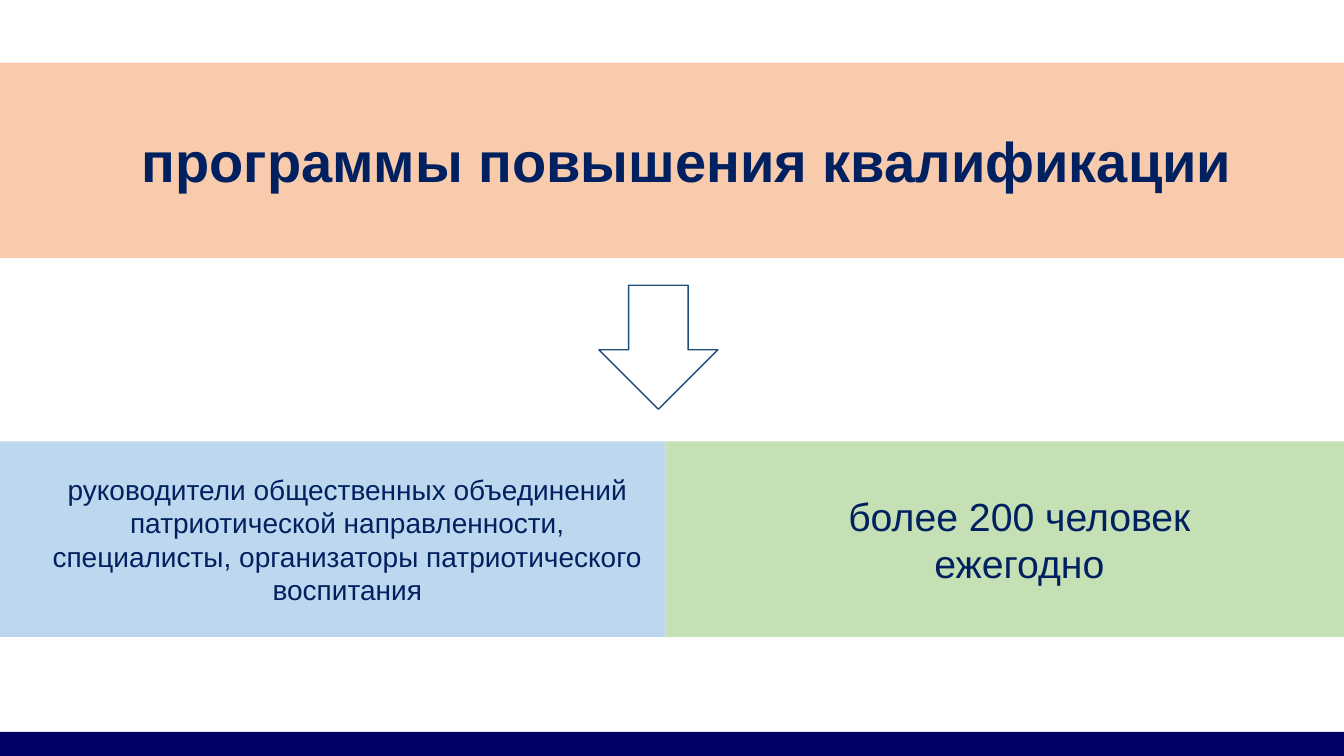
"""Build a slide on professional training programmes."""
from pptx import Presentation
from pptx.dml.color import RGBColor
from pptx.enum.shapes import MSO_SHAPE as Shape
from pptx.enum.text import MSO_ANCHOR as Anchor, PP_ALIGN as Align
from pptx.util import Inches, Pt


def paint(item, color):
    item.fill.solid()
    item.fill.fore_color.rgb = RGBColor.from_string(color)


def write(item, lines, size, bold=False):
    frame = item.text_frame
    frame.word_wrap = True
    frame.vertical_anchor = Anchor.MIDDLE
    frame.text = "\n".join(lines)
    for para in frame.paragraphs:
        para.alignment = Align.CENTER
        props = para._p.get_or_add_pPr()
        props.set("marL", str(Inches(0.29)))
        props.set("indent", "0")
        para.font.name = "Arial"
        para.font.size = Pt(size)
        para.font.bold = bold
        para.font.color.rgb = RGBColor.from_string("002060")


deck = Presentation()
deck.slide_width = Inches(13.33)
deck.slide_height = Inches(7.5)
slide = deck.slides.add_slide(deck.slide_layouts[5])

title = slide.shapes.title
title.left, title.top = Inches(0), Inches(0.62)
title.width, title.height = Inches(13.33), Inches(1.94)
paint(title, "F8CBAD")
write(title, ["программы повышения квалификации"], 40, True)

groups = ["руководители общественных объединений патриотической направленности, "
          "специалисты, организаторы патриотического воспитания"]
count = ["более 200 человек", "ежегодно"]
blocks = [
    (Shape.RECTANGLE, 0, 7.26, 13.33, 0.24, "000066", None, 0),
    (Shape.RECTANGLE, 0, 4.38, 6.6, 1.94, "BDD7EE", groups, 20),
    (Shape.RECTANGLE, 6.6, 4.38, 6.73, 1.94, "C5E0B4", count, 28),
    (Shape.DOWN_ARROW, 5.94, 2.83, 1.18, 1.23, "FFFFFF", None, 0),
]
for kind, left, top, width, height, color, lines, size in blocks:
    block = slide.shapes.add_shape(
        kind, Inches(left), Inches(top), Inches(width), Inches(height))
    block.shadow.inherit = False
    paint(block, color)
    if kind == Shape.DOWN_ARROW:
        block.line.color.rgb = RGBColor.from_string("1F4E79")
        block.line.width = Pt(1)
    else:
        block.line.fill.background()
    if lines:
        write(block, lines, size)

deck.save("out.pptx")
